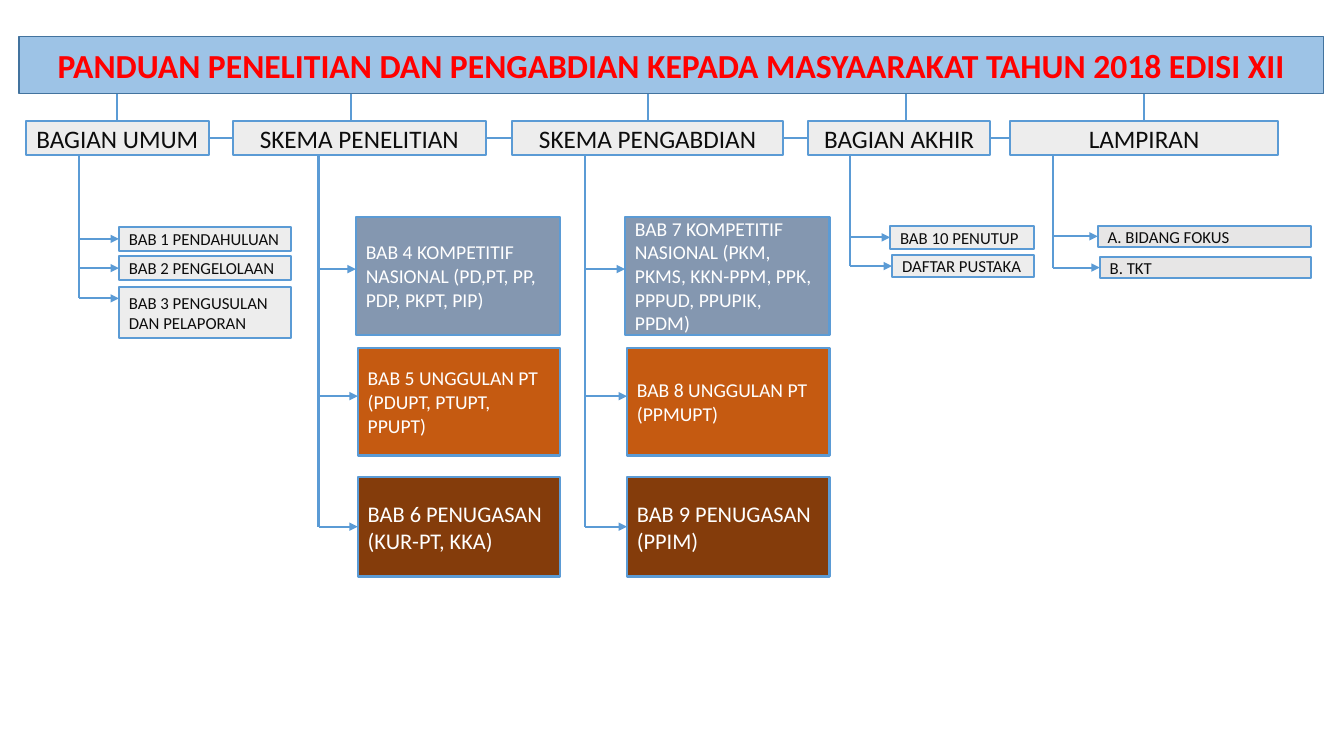
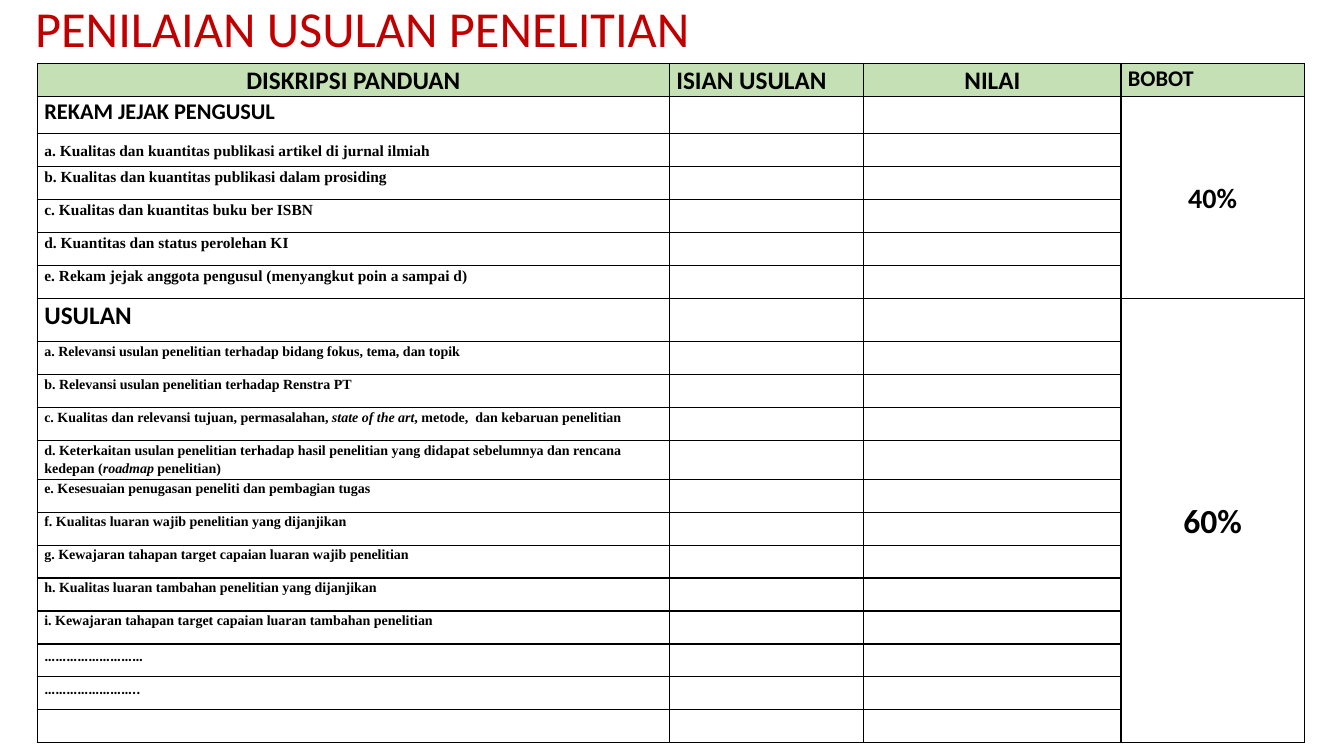
from dataclasses import dataclass

from lxml import etree
from pptx import Presentation
from pptx.dml.color import RGBColor
from pptx.enum.shapes import MSO_CONNECTOR, MSO_SHAPE
from pptx.enum.text import MSO_ANCHOR, PP_ALIGN
from pptx.oxml.ns import qn
from pptx.util import Inches, Pt

RECT, STRAIGHT = MSO_SHAPE.RECTANGLE, MSO_CONNECTOR.STRAIGHT
TOP, MIDDLE = MSO_ANCHOR.TOP, MSO_ANCHOR.MIDDLE
LEFT, CENTER = PP_ALIGN.LEFT, PP_ALIGN.CENTER
SIDE_TOP, SIDE_LEFT, SIDE_RIGHT = 0, 1, 3
COLS, ROWS = 133.33, 75  # grid cells across and down the slide
NEAR = 0.35  # cells within which a line counts as meeting a side's middle


@dataclass(frozen=True)
class TextStyle:
    size: float
    color: str = "000000"
    bold: bool = False
    font: str = "Calibri"
    align: int = LEFT
    spacing: float = 1.0


@dataclass(frozen=True)
class BoxStyle:
    fill: str
    text: TextStyle
    line: str = "5B9BD5"
    width: float = 1.5


class Theme:
    line, line_width = "5B9BD5", 1.5
    border, border_width = "000000", 1
    header_fill = "C5E0B4"
    title = TextStyle(36, "C00000", spacing=0.9)
    # Diagram boxes
    banner = BoxStyle("9DC3E6", TextStyle(24, "FF0000", True, align=CENTER), "43739E", 1)
    heading = BoxStyle("EDEDED", TextStyle(18, "0D0D0D", align=CENTER))
    chapter = BoxStyle("EDEDED", TextStyle(12, "0D0D0D"))
    appendix = BoxStyle("E7E6E6", TextStyle(12, "0D0D0D"))
    competitive = BoxStyle("8497B0", TextStyle(14, "FFFFFF"))
    flagship = BoxStyle("C55A11", TextStyle(14, "FFFFFF"))
    assignment = BoxStyle("843C0B", TextStyle(16, "FFFFFF"))
    # Table text
    head = TextStyle(18, bold=True, spacing=1.07)
    head_center = TextStyle(18, bold=True, align=CENTER, spacing=1.07)
    head_small = TextStyle(16, bold=True, spacing=1.07)
    record = TextStyle(11, bold=True, font="Times New Roman", spacing=1.15)
    proposal = TextStyle(10, bold=True, font="Times New Roman", spacing=1.15)
    open_item = TextStyle(11, bold=True, spacing=1.15)
    weight_record = TextStyle(20, bold=True, align=CENTER, spacing=1.07)
    weight_proposal = TextStyle(24, bold=True, align=CENTER, spacing=1.07)


class Deck:
    def __init__(self):
        self.prs = Presentation()
        self.prs.slide_width, self.prs.slide_height = Inches(13.33), Inches(7.5)
        self.slide = None

    def x(self, cols):
        return round(self.prs.slide_width * cols / COLS)

    def y(self, rows):
        return round(self.prs.slide_height * rows / ROWS)

    def frame(self, left, top, width, height):
        return self.x(left), self.y(top), self.x(width), self.y(height)

    def new_slide(self):
        self.slide = self.prs.slides.add_slide(self.prs.slide_layouts[6])

    def set_text(self, frame, text, style):
        """One paragraph per line; parts between asterisks are italic."""
        frame.word_wrap = True
        for number, line in enumerate(text.split("\n")):
            paragraph = frame.add_paragraph() if number else frame.paragraphs[0]
            paragraph.alignment = style.align
            paragraph.line_spacing = style.spacing
            font = paragraph.font
            font.name, font.size, font.bold = style.font, Pt(style.size), style.bold
            font.color.rgb = RGBColor.from_string(style.color)
            for part, words in enumerate(line.split("*")):
                run = paragraph.add_run()
                run.text = words
                if part % 2:
                    run.font.italic = True

    def title(self, text, *place):
        box = self.slide.shapes.add_textbox(*self.frame(*place))
        box.text_frame.vertical_anchor = MIDDLE
        self.set_text(box.text_frame, text, Theme.title)

    def box(self, text, style, *place):
        shape = self.slide.shapes.add_shape(RECT, *self.frame(*place))
        shape.shadow.inherit = False
        shape.fill.solid()
        shape.fill.fore_color.rgb = RGBColor.from_string(style.fill)
        shape.line.color.rgb = RGBColor.from_string(style.line)
        shape.line.width = Pt(style.width)
        shape.text_frame.vertical_anchor = MIDDLE
        self.set_text(shape.text_frame, text, style.text)
        return shape

    def line(self, x1, y1, x2, y2, arrow=False, begin=None, end=None):
        """begin and end are (shape, side) pairs to join."""
        link = self.slide.shapes.add_connector(
            STRAIGHT, self.x(x1), self.y(y1), self.x(x2), self.y(y2))
        link.line.color.rgb = RGBColor.from_string(Theme.line)
        link.line.width = Pt(Theme.line_width)
        properties = link._element.spPr
        if arrow:
            etree.SubElement(properties.find(qn("a:ln")), qn("a:tailEnd"), type="triangle")
        etree.SubElement(properties, qn("a:effectLst"))
        if begin:
            link.begin_connect(*begin)
        if end:
            link.end_connect(*end)

    def table(self, left, top, widths, heights):
        holder = self.slide.shapes.add_table(
            len(heights), len(widths),
            *self.frame(left, top, sum(widths), sum(heights)))
        table = holder.table
        table.first_row = table.horz_banding = False
        for column, width in zip(table.columns, widths):
            column.width = self.x(width)
        for row, height in zip(table.rows, heights):
            row.height = self.y(height)
        for cell in table.iter_cells():
            cell.margin_left = cell.margin_right = self.x(0.7)
            cell.margin_top = cell.margin_bottom = 0
            cell.fill.background()
            self.outline(cell)
        return table

    def outline(self, cell):
        properties = cell._tc.get_or_add_tcPr()
        for order, side in enumerate(("a:lnL", "a:lnR", "a:lnT", "a:lnB")):
            border = etree.Element(qn(side), w=str(Pt(Theme.border_width)))
            fill = etree.SubElement(border, qn("a:solidFill"))
            etree.SubElement(fill, qn("a:srgbClr"), val=Theme.border)
            properties.insert(order, border)

    def cell(self, cell, text, style, anchor=TOP, fill=None):
        cell.vertical_anchor = anchor
        if fill:
            cell.fill.solid()
            cell.fill.fore_color.rgb = RGBColor.from_string(fill)
        self.set_text(cell.text_frame, text, style)


def scheme(left, competitive, flagship, assignment):
    """The three chapters that each scheme has, on shared rows."""
    return [
        (left, 21.5, 11.7, 26.7, Theme.competitive, competitive),
        (left + 0.2, 34.5, 10.7, 39.3, Theme.flagship, flagship),
        (left + 0.2, 47.3, 9.9, 52.2, Theme.assignment, assignment),
    ]


# Heading, left, width, drop line, spine, right edge of chapters,
# chapters as (left, top, height, arrow row, style, text)
BRANCHES = [
    ("BAGIAN UMUM", 2.6, 18.1, 11.7, 7.8, 28.9, [
        (11.8, 22.5, 2.4, 23.4, Theme.chapter, "BAB 1 PENDAHULUAN"),
        (11.8, 25.4, 2.4, 26.5, Theme.chapter, "BAB 2 PENGELOLAAN"),
        (11.8, 28.5, 5, 29.6, Theme.chapter, "BAB 3 PENGUSULAN DAN PELAPORAN"),
    ]),
    ("SKEMA PENELITIAN", 23.1, 25.1, 34.8, 31.6, 55.6, scheme(
        35.3,
        "BAB 4 KOMPETITIF NASIONAL (PD,PT, PP, PDP, PKPT, PIP)",
        "BAB 5 UNGGULAN PT\n(PDUPT, PTUPT, PPUPT)",
        "BAB 6 PENUGASAN\n(KUR-PT, KKA)")),
    ("SKEMA PENGABDIAN", 50.8, 26.9, 64.3, 58, 82.3, scheme(
        62,
        "BAB 7 KOMPETITIF NASIONAL (PKM, PKMS, KKN-PPM, PPK, PPPUD, PPUPIK, PPDM)",
        "BAB 8 UNGGULAN PT\n(PPMUPT)",
        "BAB 9 PENUGASAN\n(PPIM)")),
    ("BAGIAN AKHIR", 80.2, 18, 89.9, 84.3, 102.6, [
        (88.3, 22.4, 2.3, 23.6, Theme.chapter, "BAB 10 PENUTUP"),
        (88.5, 25.3, 2.2, 26.4, Theme.chapter, "DAFTAR PUSTAKA"),
    ]),
    ("LAMPIRAN", 100.2, 26.6, 113.5, 104.5, 130.1, [
        (108.9, 22.4, 2.1, 23.5, Theme.appendix, "A. BIDANG FOKUS"),
        (109.1, 25.5, 2.1, 26.6, Theme.appendix, "B. TKT"),
    ]),
]

RECORD_ITEMS = [
    "a. Kualitas dan kuantitas publikasi artikel di jurnal ilmiah",
    "b. Kualitas dan kuantitas publikasi dalam prosiding",
    "c. Kualitas dan kuantitas buku ber ISBN",
    "d. Kuantitas dan status perolehan KI",
    "e. Rekam jejak anggota pengusul (menyangkut poin a sampai d)",
]
PROPOSAL_ITEMS = [
    "a. Relevansi usulan penelitian terhadap bidang fokus, tema, dan topik",
    "b. Relevansi usulan penelitian terhadap Renstra PT",
    "c. Kualitas dan relevansi tujuan, permasalahan, *state of the art*, metode,  dan kebaruan penelitian",
    "d. Keterkaitan usulan penelitian terhadap hasil penelitian yang didapat sebelumnya "
    "dan rencana kedepan (*roadmap *penelitian)",
    "e. Kesesuaian penugasan peneliti dan pembagian tugas",
    "f. Kualitas luaran wajib penelitian yang dijanjikan",
    "g. Kewajaran tahapan target capaian luaran wajib penelitian",
    "h. Kualitas luaran tambahan penelitian yang dijanjikan",
    "i. Kewajaran tahapan target capaian luaran tambahan penelitian",
]
OPEN_ITEMS = ["………………………", "…………………….."]


def guide_slide(deck):
    deck.new_slide()
    banner_top, banner_height, heading_top, heading_height = 3.6, 5.7, 12, 3.4
    banner_bottom = banner_top + banner_height
    heading_bottom = heading_top + heading_height
    heading_middle = heading_top + heading_height / 2
    deck.box("PANDUAN PENELITIAN DAN PENGABDIAN KEPADA MASYAARAKAT TAHUN 2018 EDISI XII",
             Theme.banner, 1.9, banner_top, 129.4, banner_height)

    previous, previous_right = None, 0
    for name, left, width, drop, spine, right, chapters in BRANCHES:
        heading = deck.box(name, Theme.heading, left, heading_top, width, heading_height)
        # Links to the banner and to the heading before
        centred = abs(left + width / 2 - drop) < NEAR
        deck.line(left + width / 2 if centred else drop, banner_bottom, drop, heading_top,
                  end=(heading, SIDE_TOP) if centred else None)
        if previous:
            deck.line(previous_right, heading_middle, left, heading_middle,
                      begin=(previous, SIDE_RIGHT), end=(heading, SIDE_LEFT))
        previous, previous_right = heading, left + width
        # Chapters hanging from the spine
        for start, top, height, row, style, text in chapters:
            chapter = deck.box(text, style, start, top, right - start, height)
            middle = top + height / 2
            joined = abs(middle - row) < NEAR
            row = middle if joined else row
            deck.line(spine, row, start, row, arrow=True,
                      end=(chapter, SIDE_LEFT) if joined else None)
        deck.line(spine, heading_bottom, spine, row)


def scoring_slide(deck):
    deck.new_slide()
    deck.title("PENILAIAN USULAN PENELITIAN", 2.5, 1.3, 115, 3.5)

    rows = [("REKAM JEJAK PENGUSUL", Theme.head_small)]
    rows += [(item, Theme.record) for item in RECORD_ITEMS]
    proposal_row = len(rows) + 1
    rows += [("USULAN", Theme.head)]
    rows += [(item, Theme.proposal) for item in PROPOSAL_ITEMS]
    rows += [(item, Theme.open_item) for item in OPEN_ITEMS]
    last_row = len(rows) + 1  # left empty

    # Three taller rows; the others share the remaining height
    tall = {1: 3.7, proposal_row: 4.3, proposal_row + 4: 3.6}
    usual = (67.2 - sum(tall.values())) / (last_row + 1 - len(tall))
    heights = [tall.get(number, usual) for number in range(last_row + 1)]
    table = deck.table(3.7, 6.3, [62.7, 19.3, 25.5, 18.2], heights)

    headers = [("DISKRIPSI PANDUAN", Theme.head_center), ("ISIAN USULAN", Theme.head),
               ("NILAI", Theme.head_center), ("BOBOT", Theme.head_small)]
    for column, (text, style) in enumerate(headers):
        deck.cell(table.cell(0, column), text, style, fill=Theme.header_fill)
    for number, (text, style) in enumerate(rows, start=1):
        deck.cell(table.cell(number, 0), text, style, MIDDLE if number == 2 else TOP)

    # Weights, each across its section
    for first, last, text, style in [
            (1, proposal_row - 1, "40%", Theme.weight_record),
            (proposal_row, last_row, "60%", Theme.weight_proposal)]:
        table.cell(first, 3).merge(table.cell(last, 3))
        deck.cell(table.cell(first, 3), text, style, MIDDLE)


def main():
    deck = Deck()
    guide_slide(deck)
    scoring_slide(deck)
    deck.prs.save("out.pptx")


if __name__ == "__main__":
    main()
